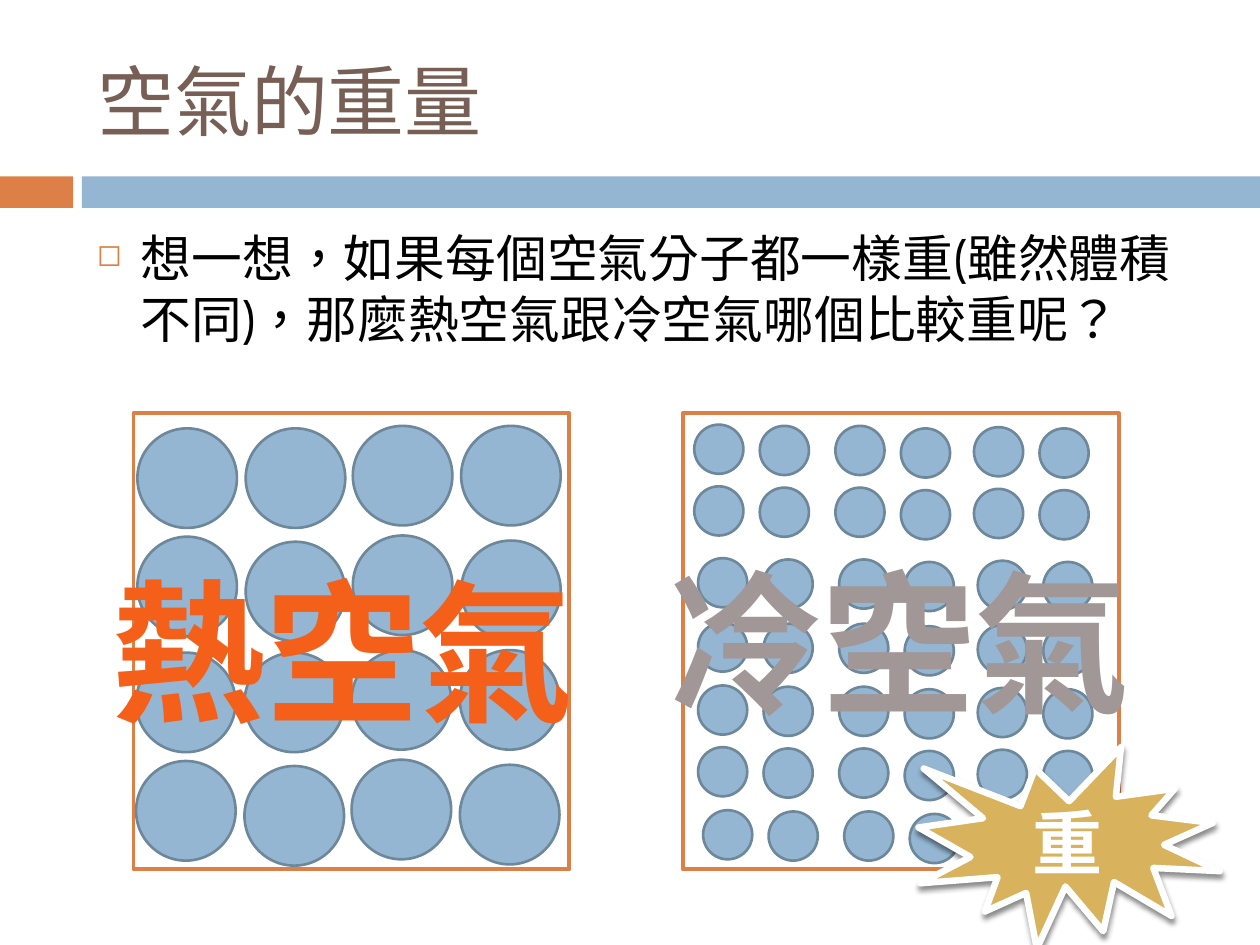
from dataclasses import dataclass

from lxml import etree
from pptx import Presentation
from pptx.dml.color import RGBColor
from pptx.enum.shapes import MSO_SHAPE
from pptx.enum.text import MSO_ANCHOR, MSO_AUTO_SIZE, PP_ALIGN
from pptx.oxml import parse_xml
from pptx.oxml.ns import nsdecls, qn
from pptx.util import Emu, Pt

RECT = MSO_SHAPE.RECTANGLE
OVAL = MSO_SHAPE.OVAL
BURST = MSO_SHAPE.EXPLOSION1
MIDDLE = MSO_ANCHOR.MIDDLE
LEFT, CENTER = PP_ALIGN.LEFT, PP_ALIGN.CENTER
NO_FIT, GROW = MSO_AUTO_SIZE.NONE, MSO_AUTO_SIZE.SHAPE_TO_FIT_TEXT
EMU_PER_PX = 9144


@dataclass(frozen=True)
class Theme:
    font: str = "Cabin"
    lang: str = "zh-TW"
    title: str = "775F55"
    text: str = "000000"
    white: str = "FFFFFF"
    orange: str = "DD8047"
    blue: str = "94B6D2"
    outline: str = "6D879B"
    gold: str = "D8B25C"
    cold: tuple = ((0, "A59C9C"), (25, "A19797"), (50, "8F8585"), (75, "A19797"), (100, "A59C9C"))
    hot: tuple = ((0, "FFA988"), (75, "F46019"), (100, "D85200"))
    title_size: int = 44
    body_size: int = 29
    label_size: int = 88
    burst_size: int = 40


def px(*values):
    return [Emu(v * EMU_PER_PX) for v in values]


class SlideBuilder:
    def __init__(self, prs, theme):
        self.theme = theme
        self.s = prs.slides.add_slide(prs.slide_layouts[5])

    def format(self, p, size, color=None, bold=False):
        for r in p.runs:
            r.font.name = self.theme.font
            r.font.size = Pt(size)
            r.font.bold = bold
            r.font._element.set("lang", self.theme.lang)
            if color:
                r.font.color.rgb = RGBColor.from_string(color)

    def title(self, text, box):
        sp = self.s.shapes.title
        sp.left, sp.top, sp.width, sp.height = px(*box)
        tf = sp.text_frame
        tf.text = text
        tf.auto_size = NO_FIT
        tf.vertical_anchor = MIDDLE
        tf.paragraphs[0].alignment = LEFT
        self.format(tf.paragraphs[0], self.theme.title_size, self.theme.title)

    def bullet(self, text, box, indent):
        tf = self.s.shapes.add_textbox(*px(*box)).text_frame
        tf.word_wrap = True
        tf.text = text
        p = tf.paragraphs[0]
        p.space_before = Pt(7)
        self.format(p, self.theme.body_size, self.theme.text)
        pPr = p._p.get_or_add_pPr()
        pPr.set("marL", str(indent * EMU_PER_PX))
        pPr.set("indent", str(-indent * EMU_PER_PX))
        color = etree.SubElement(pPr, qn("a:buClr"))
        etree.SubElement(color, qn("a:srgbClr"), val=self.theme.orange)
        etree.SubElement(pPr, qn("a:buSzPct"), val="60000")
        etree.SubElement(pPr, qn("a:buChar"), char="◻")

    def shape(self, kind, box, fill, line=None, width=0, parent=None):
        sp = (parent or self.s).shapes.add_shape(kind, *px(*box))
        sp.shadow.inherit = False
        sp.fill.solid()
        sp.fill.fore_color.rgb = RGBColor.from_string(fill)
        if line:
            sp.line.color.rgb = RGBColor.from_string(line)
            sp.line.width = Pt(width)
        else:
            sp.line.fill.background()
        return sp

    def air_box(self, box, columns, rows, size):
        group = self.s.shapes.add_group_shape()
        self.shape(RECT, box, self.theme.white, self.theme.orange, 2.25, group)
        for dx, top, offsets in rows:
            for x, dy in zip(columns, offsets):
                self.shape(OVAL, (x + dx, top + dy, size, size),
                           self.theme.blue, self.theme.outline, 1.5, group)

    def label(self, text, box, stops):
        tf = self.s.shapes.add_textbox(*px(*box)).text_frame
        tf.word_wrap = False
        tf.auto_size = GROW
        tf.text = text
        p = tf.paragraphs[0]
        self.format(p, self.theme.label_size, bold=True)
        marks = "".join(f'<a:gs pos="{pos * 1000}"><a:srgbClr val="{color}"/></a:gs>'
                        for pos, color in stops)
        p.runs[0].font._element.insert(0, parse_xml(
            f'<a:gradFill {nsdecls("a")}><a:gsLst>{marks}</a:gsLst>'
            '<a:lin ang="5400000"/></a:gradFill>'))

    def burst(self, text, box):
        sp = self.shape(BURST, box, self.theme.gold, self.theme.white, 3.75)
        effects = sp._element.spPr.find(qn("a:effectLst"))
        effects.append(parse_xml(
            f'<a:outerShdw {nsdecls("a")} blurRad="{Pt(3)}" dist="{Pt(2.4)}" dir="5400000">'
            '<a:srgbClr val="000000"><a:alpha val="45000"/></a:srgbClr></a:outerShdw>'))
        tf = sp.text_frame
        tf.text = text
        tf.vertical_anchor = MIDDLE
        tf.paragraphs[0].alignment = CENTER
        self.format(tf.paragraphs[0], self.theme.burst_size, self.theme.white, True)


def main():
    theme = Theme()
    prs = Presentation()
    prs.slide_width, prs.slide_height = px(1000, 750)
    b = SlideBuilder(prs, theme)

    b.shape(RECT, (0, 140, 58, 25), theme.orange)
    b.shape(RECT, (65, 140, 935, 25), theme.blue)
    b.title("空氣的重量", (67, 25, 892, 108))
    b.bullet("想一想，如果每個空氣分子都一樣重(雖然體積不同)，那麼熱空氣跟冷空氣哪個比較重呢？",
             (67, 175, 892, 492), 35)

    level, uneven = (0, 0, -2, -2), (0, 4, -1, 3)
    hot_rows = [(0, 340, level), (0, 426, uneven), (-1, 518, level), (-1, 604, uneven)]
    b.air_box((106, 328, 346, 362), (109, 195, 280, 366), hot_rows, 79)

    drift = (0, 1, 1, 3, 2, 3)
    cold_starts = [(0, 337), (0, 386), (3, 443), (3, 494), (3, 544), (3, 593), (7, 643)]
    cold_rows = [(dx, top, drift) for dx, top in cold_starts]
    b.air_box((542, 328, 346, 362), (551, 603, 663, 715, 773, 825), cold_rows, 39)

    b.label("冷空氣", (520, 430, 390, 158), theme.cold)
    b.label("熱空氣", (79, 437, 390, 158), theme.hot)
    b.burst("重", (729, 593, 239, 160))
    prs.save("out.pptx")


if __name__ == "__main__":
    main()
